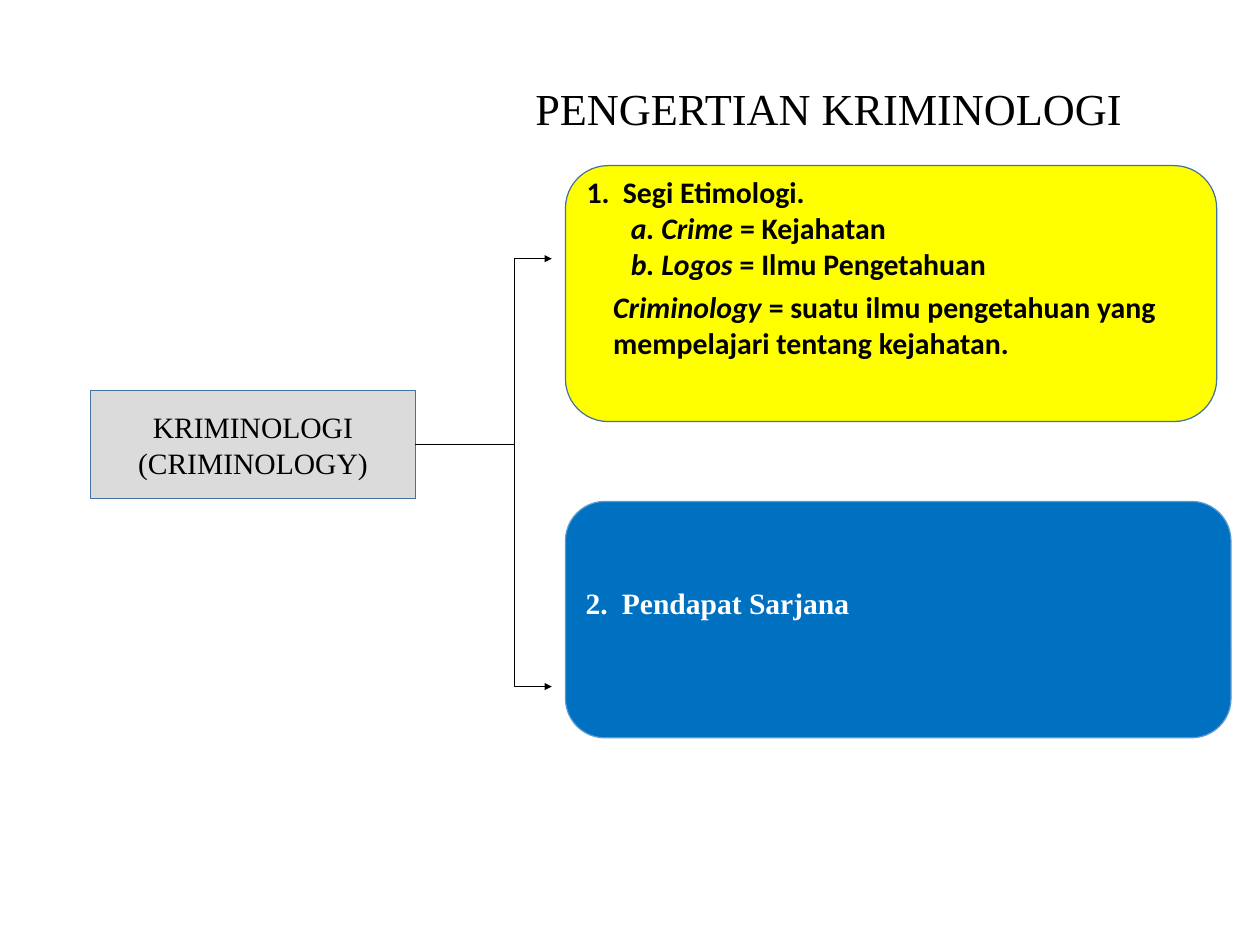
from lxml.etree import SubElement
from pptx import Presentation
from pptx.dml.color import RGBColor
from pptx.enum.shapes import MSO_CONNECTOR, MSO_SHAPE
from pptx.enum.text import MSO_ANCHOR as Anchor, PP_ALIGN as Align
from pptx.oxml.ns import qn
from pptx.util import Cm, Pt

BLACK = RGBColor(0x00, 0x00, 0x00)
WHITE = RGBColor(0xFF, 0xFF, 0xFF)
GREY = RGBColor(0xDB, 0xDB, 0xDB)
YELLOW = RGBColor(0xFF, 0xFF, 0x00)
BLUE = RGBColor(0x00, 0x70, 0xC0)
EDGE = RGBColor(0x43, 0x73, 0x9E)
LIGHT_EDGE = RGBColor(0x5B, 0x9B, 0xD5)

SERIF = "Times New Roman"
SANS = "Calibri"


class SlideBuilder:
    def __init__(self, deck):
        self.page = deck.slides.add_slide(deck.slide_layouts[5])

    def title(self, text, left, top, width, height):
        box = self.page.shapes.title
        box.left, box.top, box.width, box.height = map(Cm, (left, top, width, height))
        box.text_frame.vertical_anchor = Anchor.MIDDLE
        para = box.text_frame.paragraphs[0]
        para.alignment = Align.LEFT
        para.line_spacing = 0.9
        self.span(para, text, SERIF, 36, BLACK)

    def span(self, para, text, font, size, color, bold=False, italic=False):
        span = para.add_run()
        span.text = text
        span.font.name = font
        span.font.size = Pt(size)
        span.font.color.rgb = color
        span.font.bold = bold
        span.font.italic = italic

    def box(self, kind, place, fill, edge, top_inset=0.13, bottom_inset=0.13):
        box = self.page.shapes.add_shape(kind, *map(Cm, place))
        box.shadow.inherit = False
        box.fill.solid()
        box.fill.fore_color.rgb = fill
        box.line.color.rgb = edge
        box.line.width = Pt(1)
        frame = box.text_frame
        frame.word_wrap = True
        frame.vertical_anchor = Anchor.MIDDLE
        frame.margin_top, frame.margin_bottom = Cm(top_inset), Cm(bottom_inset)
        return box

    def paragraph(self, box, first=False, align=Align.LEFT, margin=0, indent=0):
        frame = box.text_frame
        para = frame.paragraphs[0] if first else frame.add_paragraph()
        para.alignment = align
        properties = para._p.get_or_add_pPr()
        properties.set("marL", str(Cm(margin)))
        properties.set("indent", str(Cm(indent)))
        return para

    def thin_line(self, shape):
        shape.line.color.rgb = BLACK
        shape.line.width = Pt(0.75)

    def bracket(self, left, right, top, bottom):
        """Draw an open bracket with an arrowhead at both ends."""
        path = self.page.shapes.build_freeform(Cm(right), Cm(top))
        corners = [(left, top), (left, bottom), (right, bottom)]
        path.add_line_segments([(Cm(x), Cm(y)) for x, y in corners], close=False)
        bracket = path.convert_to_shape()
        bracket.shadow.inherit = False
        bracket.fill.background()
        self.thin_line(bracket)
        outline = bracket.element.spPr.find(qn("a:ln"))
        for end in ("a:headEnd", "a:tailEnd"):
            SubElement(outline, qn(end), type="triangle")

    def stem(self, box, right):
        """Draw a line from the middle of the box's right side."""
        middle = box.top + box.height // 2
        line = self.page.shapes.add_connector(
            MSO_CONNECTOR.STRAIGHT, box.left + box.width, middle, Cm(right), middle)
        line.begin_connect(box, 3)
        self.thin_line(line)
        SubElement(line.element.spPr, qn("a:effectLst"))


def main():
    deck = Presentation()
    deck.slide_width, deck.slide_height = Cm(36.12), Cm(27.1)
    slide = SlideBuilder(deck)
    slide.title("PENGERTIAN KRIMINOLOGI", 15.09, 1.14, 20.98, 4.11)

    topic = slide.box(MSO_SHAPE.RECTANGLE, (2.59, 11.2, 9.32, 3.1), GREY, EDGE)
    for index, text in enumerate(["KRIMINOLOGI", "(CRIMINOLOGY)"]):
        para = slide.paragraph(topic, index == 0, Align.CENTER)
        slide.span(para, text, SERIF, 24, BLACK)

    etymology = slide.box(MSO_SHAPE.ROUNDED_RECTANGLE, (16.21, 4.75, 18.67, 7.34),
                          YELLOW, EDGE, top_inset=0, bottom_inset=1.52)
    # Each entry: left margin, first-line indent, italic text, upright text
    entries = [
        (1.04, -1.04, "", "1.\tSegi Etimologi."),
        (2.49, -1.22, "a. Crime ", "= Kejahatan"),
        (2.49, -1.22, "b. Logos ", "= Ilmu Pengetahuan"),
        (0.76, 0, "Criminology",
         " = suatu ilmu pengetahuan yang mempelajari tentang kejahatan."),
    ]
    for index, (margin, indent, term, meaning) in enumerate(entries):
        para = slide.paragraph(etymology, index == 0, margin=margin, indent=indent)
        if index == 2:
            para.space_after = Pt(6)
        if term:
            slide.span(para, term, SANS, 24.2, BLACK, bold=True, italic=True)
        slide.span(para, meaning, SANS, 24.2, BLACK, bold=True)

    opinions = slide.box(MSO_SHAPE.ROUNDED_RECTANGLE, (16.21, 14.38, 19.08, 6.78),
                         BLUE, LIGHT_EDGE, bottom_inset=1.09)
    para = slide.paragraph(opinions, True, margin=1.04, indent=-1.04)
    slide.span(para, "2.\tPendapat Sarjana", SERIF, 24, WHITE, bold=True)

    slide.bracket(14.76, 15.82, 7.42, 19.69)
    slide.stem(topic, 14.76)
    deck.save("out.pptx")


if __name__ == "__main__":
    main()
